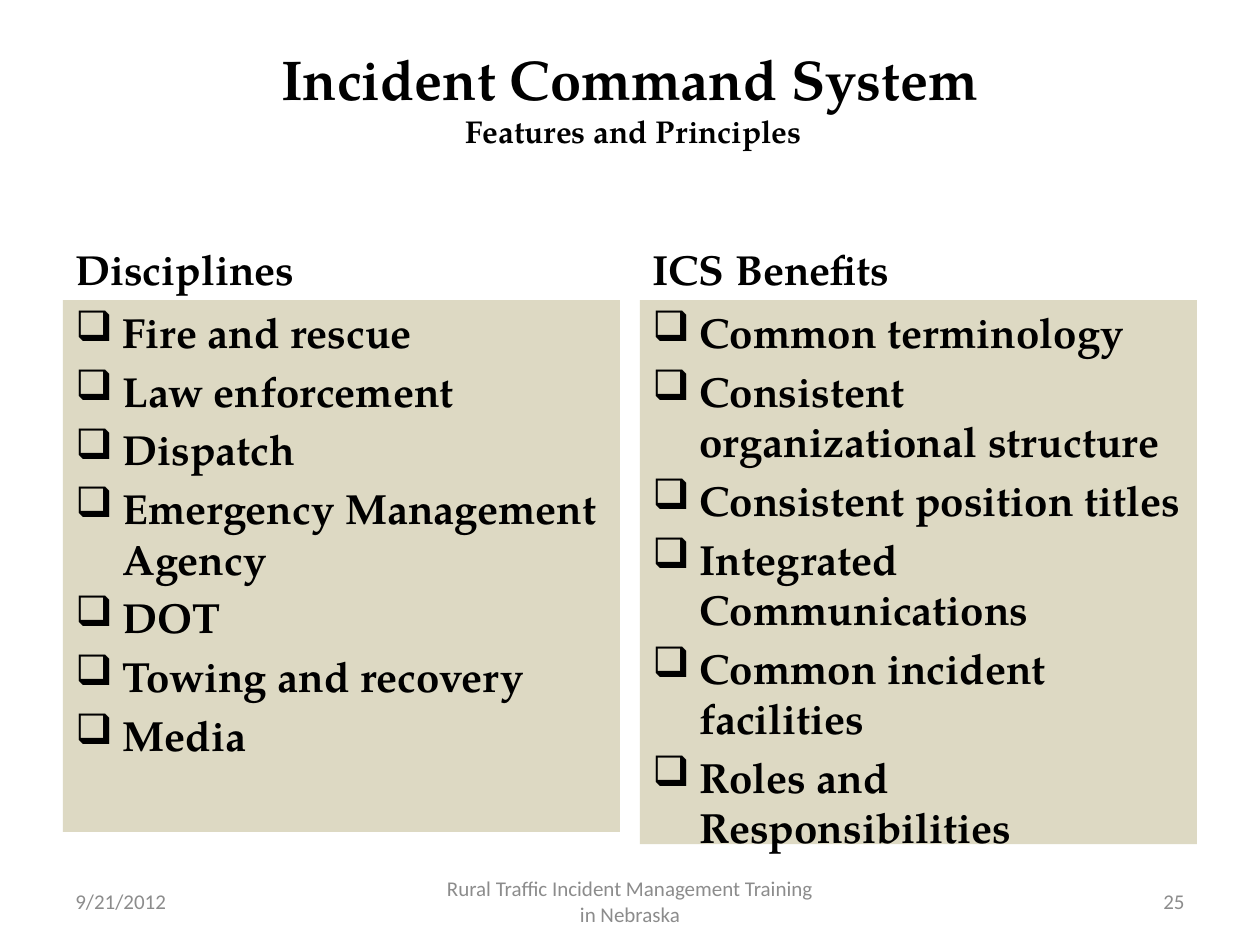
from dataclasses import dataclass

from lxml import etree
from pptx import Presentation
from pptx.dml.color import RGBColor
from pptx.enum import shapes, text
from pptx.oxml.ns import qn
from pptx.util import Cm, Pt


@dataclass(frozen=True)
class Theme:
    serif: str = "TeX Gyre Pagella"
    sans: str = "Calibri"
    ink: str = "000000"
    muted: str = "8C8C8C"
    panel: str = "DDD9C3"
    title: int = 32
    subtitle: int = 18
    body: int = 24
    footer: int = 12


theme = Theme()
LEFT, MIDDLE, RIGHT = text.PP_ALIGN.LEFT, text.PP_ALIGN.CENTER, text.PP_ALIGN.RIGHT


def write(tf, lines, size=theme.body, font=theme.serif, color=theme.ink, bold=True,
          align=LEFT, anchor=text.MSO_ANCHOR.TOP, before=0, bullet=None):
    """Fill a text frame, one paragraph per line; size is one value or one per line."""
    tf.word_wrap = True
    tf.auto_size = text.MSO_AUTO_SIZE.NONE
    tf.vertical_anchor = anchor
    sizes = size if isinstance(size, list) else [size] * len(lines)
    for i, (line, points) in enumerate(zip(lines, sizes)):
        p = tf.paragraphs[0] if i == 0 else tf.add_paragraph()
        p.alignment = align
        p.space_before = Pt(before)
        r = p.add_run()
        r.text = line
        r.font.name = font
        r.font.size = Pt(points)
        r.font.bold = bold
        r.font.color.rgb = RGBColor.from_string(color)
        if bullet:
            pPr = p._p.get_or_add_pPr()
            pPr.set("marL", str(Cm(0.95)))
            pPr.set("indent", str(-Cm(0.95)))
            etree.SubElement(pPr, qn("a:buChar")).set("char", bullet)


prs = Presentation()
prs.slide_width, prs.slide_height = Cm(25.4), Cm(19.05)
s = prs.slides.add_slide(prs.slide_layouts[6])

# Title, held above the middle by a deep bottom margin
tf = s.shapes.add_textbox(Cm(1.27), Cm(0.76), Cm(22.86), Cm(3.18)).text_frame
tf.margin_bottom = Cm(0.9)
write(tf, ["Incident Command System", " Features and Principles"],
      size=[theme.title, theme.subtitle], align=MIDDLE, anchor=text.MSO_ANCHOR.MIDDLE)

# Two columns: heading over a shaded list
columns = [
    ("Disciplines", 1.27, 10.72,
     ["Fire and rescue", "Law enforcement", "Dispatch", "Emergency Management Agency",
      "DOT", "Towing and recovery", "Media"]),
    ("ICS Benefits", 12.9, 10.97,
     ["Common terminology", "Consistent organizational structure",
      "Consistent position titles", "Integrated Communications",
      "Common incident facilities", "Roles and Responsibilities"]),
]
column_width = Cm(11.23)
for heading, left, height, items in columns:
    tf = s.shapes.add_textbox(Cm(left), Cm(4.27), column_width, Cm(1.78)).text_frame
    write(tf, [heading], anchor=text.MSO_ANCHOR.BOTTOM, before=4.8)

    sp = s.shapes.add_shape(shapes.MSO_SHAPE.RECTANGLE, Cm(left), Cm(6.05),
                            column_width, Cm(height))
    sp.shadow.inherit = False
    sp.fill.solid()
    sp.fill.fore_color.rgb = RGBColor.from_string(theme.panel)
    sp.line.fill.background()
    write(sp.text_frame, items, before=4.8, bullet="❑")

# Footer
footer = [
    ("9/21/2012", 1.27, 5.93, LEFT),
    ("Rural Traffic Incident Management Training in Nebraska", 8.68, 8.04, MIDDLE),
    ("25", 18.2, 5.93, RIGHT),
]
for label, left, width, align in footer:
    tf = s.shapes.add_textbox(Cm(left), Cm(17.66), Cm(width), Cm(1.01)).text_frame
    write(tf, [label], size=theme.footer, font=theme.sans, color=theme.muted, bold=False,
          align=align, anchor=text.MSO_ANCHOR.MIDDLE)

prs.save("out.pptx")
